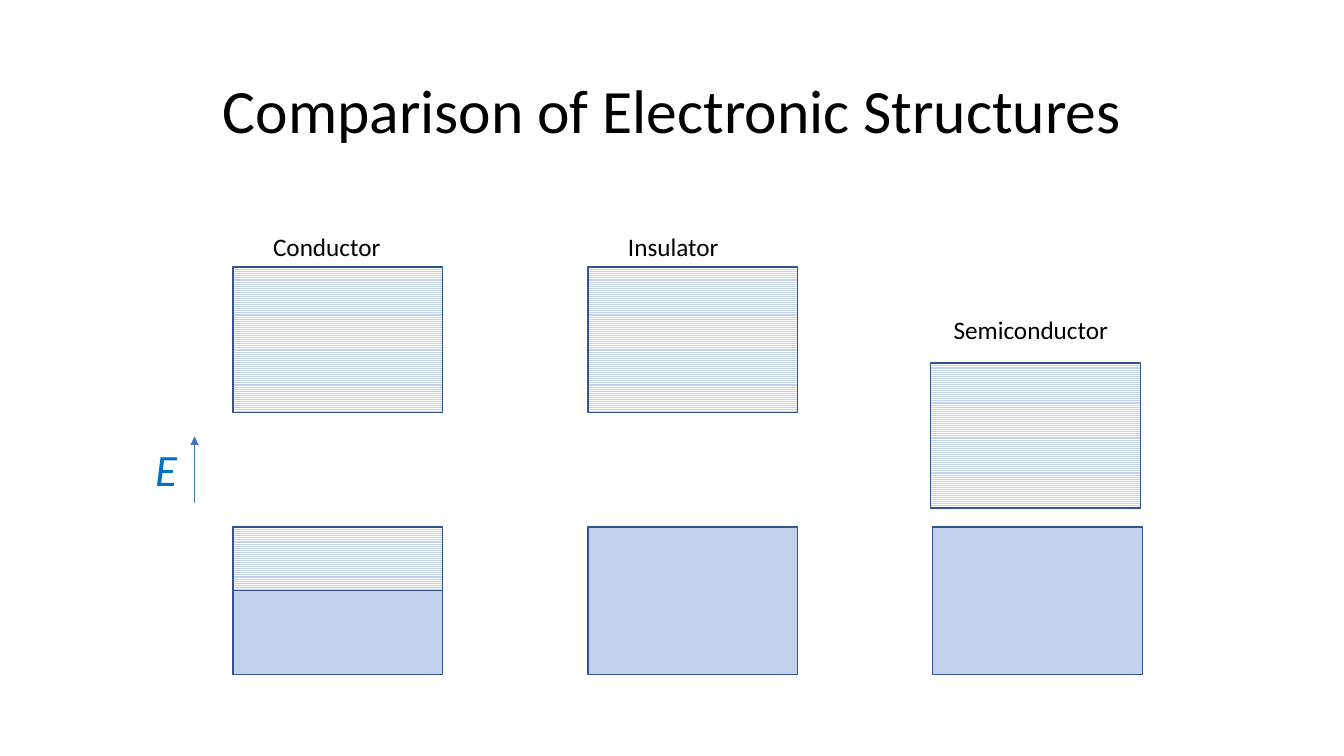
import lxml.etree
import pptx
import pptx.dml.color
import pptx.enum.dml
import pptx.enum.shapes
import pptx.enum.text
import pptx.oxml.ns
import pptx.util

Inches = pptx.util.Inches
RGBColor = pptx.dml.color.RGBColor

BLACK = RGBColor(0x00, 0x00, 0x00)
WHITE = RGBColor(0xFF, 0xFF, 0xFF)
BAND_BLUE = RGBColor(0xC2, 0xD1, 0xEC)
OUTLINE_BLUE = RGBColor(0x32, 0x54, 0x91)
ARROW_BLUE = RGBColor(0x44, 0x72, 0xC4)
ENERGY_BLUE = RGBColor(0x00, 0x70, 0xC0)

BAND_WIDTH = 2.08
BAND_HEIGHT = 1.44
FILLED_HEIGHT = 1.46
VALENCE_TOP = 5.23

# name, left, conduction band top, label (left, top, width),
# filled band left, height of the filled part
MATERIALS = [
    ("Conductor", 2.31, 2.65, (2.61, 2.25, 1.48), 2.31, 0.83),
    ("Insulator", 5.83, 2.65, (6.13, 2.25, 1.48), 5.83, FILLED_HEIGHT),
    ("Semiconductor", 9.23, 3.6, (9.36, 3.07, 1.83), 9.25, FILLED_HEIGHT),
]


def write_text(frame, text, size=18, color=BLACK, italic=None, align=None, spacing=None):
    frame.word_wrap = True
    paragraph = frame.paragraphs[0]
    paragraph.alignment = align
    paragraph.line_spacing = spacing
    run = paragraph.add_run()
    run.text = text
    run.font.name = "Calibri"
    run.font.size = pptx.util.Pt(size)
    run.font.italic = italic
    run.font.color.rgb = color


def add_label(shapes, left, top, width, height, text, **text_format):
    label = shapes.add_textbox(Inches(left), Inches(top), Inches(width), Inches(height))
    write_text(label.text_frame, text, **text_format)


def add_band(shapes, left, top, height, filled):
    """Draw an energy band: solid when filled with electrons, striped when empty."""
    band = shapes.add_shape(
        pptx.enum.shapes.MSO_SHAPE.RECTANGLE,
        Inches(left), Inches(top), Inches(BAND_WIDTH), Inches(height))
    band.shadow.inherit = False
    if filled:
        band.fill.solid()
    else:
        band.fill.patterned()
        band.fill.pattern = pptx.enum.dml.MSO_PATTERN.NARROW_HORIZONTAL
        band.fill.back_color.rgb = WHITE
    band.fill.fore_color.rgb = BAND_BLUE
    band.line.color.rgb = OUTLINE_BLUE
    band.line.width = pptx.util.Pt(1)


def add_title(slide, left, top, width, height):
    title = slide.shapes.title
    title.left, title.top = Inches(left), Inches(top)
    title.width, title.height = Inches(width), Inches(height)
    title.text_frame.vertical_anchor = pptx.enum.text.MSO_ANCHOR.MIDDLE
    write_text(title.text_frame, "Comparison of Electronic Structures", size=44,
               align=pptx.enum.text.PP_ALIGN.CENTER, spacing=0.9)


def add_material(shapes, name, left, conduction_top, label_box, filled_left, filled_height):
    """Draw the conduction band above the valence band, which may be partly filled."""
    add_label(shapes, *label_box, 0.4, name)
    add_band(shapes, left, conduction_top, BAND_HEIGHT, filled=False)
    if filled_height < FILLED_HEIGHT:
        add_band(shapes, left, VALENCE_TOP, BAND_HEIGHT, filled=False)
    filled_top = VALENCE_TOP + FILLED_HEIGHT - filled_height
    add_band(shapes, filled_left, filled_top, filled_height, filled=True)


def add_energy_axis(shapes, left, top, width, height):
    axis = shapes.add_group_shape()
    add_label(axis.shapes, left, top, width, height, "E",
              size=32, color=ENERGY_BLUE, italic=True)
    arrow_x = Inches(left + width - 0.1)
    arrow = axis.shapes.add_connector(
        pptx.enum.shapes.MSO_CONNECTOR.STRAIGHT,
        arrow_x, Inches(top + 0.66), arrow_x, Inches(top))
    arrow.line.color.rgb = ARROW_BLUE
    arrow.line.width = pptx.util.Pt(1)
    qn = pptx.oxml.ns.qn
    lxml.etree.SubElement(arrow.line._get_or_add_ln(), qn("a:tailEnd"), type="triangle")
    lxml.etree.SubElement(arrow._element.spPr, qn("a:effectLst"))


def main():
    presentation = pptx.Presentation()
    presentation.slide_width = Inches(13.33)
    presentation.slide_height = Inches(7.5)
    slide = presentation.slides.add_slide(presentation.slide_layouts.get_by_name("Title Only"))
    add_title(slide, 0.92, 0.4, 11.5, 1.45)
    for material in MATERIALS:
        add_material(slide.shapes, *material)
    add_energy_axis(slide.shapes, 1.44, 4.33, 0.59, 0.64)
    presentation.save("out.pptx")


if __name__ == "__main__":
    main()
